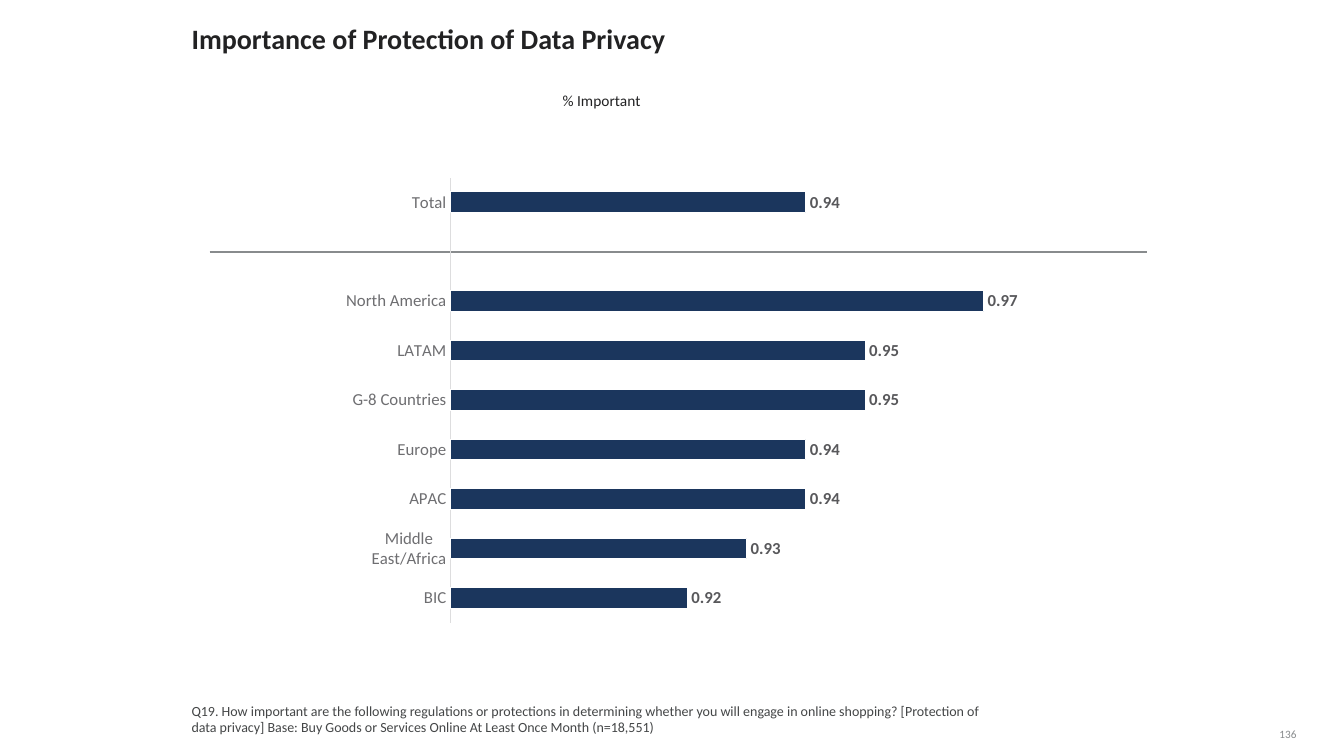
from lxml import etree
from pptx import Presentation
from pptx import util as u
from pptx.chart import data as chart_data
from pptx.dml import color
from pptx.enum import chart as ch, shapes, text
from pptx.oxml import parse_xml
from pptx.oxml.ns import nsdecls, qn

WIDTH, HEIGHT = 13.33, 7.5
LEFT_MARGIN = 1.9
FONT = "Calibri"
COLORS = {"ink": "222223", "note": "444647", "label": "6E6E71", "value": "58585B",
          "rule": "888B8D", "axis": "DDDDDE", "bar": "1B365D", "edge": "FFFFFF"}

# Bars and the empty row that separates the total from the regions
IMPORTANCE = [("Total", 0.94), ("", None), ("North America", 0.97), ("LATAM", 0.95),
              ("G-8 Countries", 0.95), ("Europe", 0.94), ("APAC", 0.94),
              ("Middle East/Africa", 0.93), ("BIC", 0.92)]
# Share of the chart frame taken by the bars: left, top, width, height
PLOT_SHARE = {"x": 0.14, "y": 0.02, "w": 0.84, "h": 0.96}


def rgb(name):
    return color.RGBColor.from_string(COLORS[name])


def style_font(font, size, hue, bold=False):
    font.name, font.size, font.bold = FONT, u.Pt(size), bold
    font.color.rgb = rgb(hue)


def style_line(line, hue, width):
    line.color.rgb = rgb(hue)
    line.width = u.Pt(width)


def fill_text(box, words, size, hue, bold=False, spacing=1.0,
              anchor=text.MSO_ANCHOR.TOP, wrap=True):
    frame = box.text_frame
    frame.margin_left = frame.margin_right = frame.margin_top = frame.margin_bottom = 0
    frame.auto_size = text.MSO_AUTO_SIZE.NONE
    frame.word_wrap = wrap
    frame.vertical_anchor = anchor
    paragraph = frame.paragraphs[0]
    paragraph.alignment = text.PP_ALIGN.LEFT
    paragraph.line_spacing = spacing
    paragraph.space_before = u.Pt(0)
    run = paragraph.add_run()
    run.text = words
    style_font(run.font, size, hue, bold)


def add_text(slide, place, words, size, hue, **options):
    box = slide.shapes.add_textbox(*map(u.Inches, place))
    fill_text(box, words, size, hue, **options)


def set_title(slide, place, words):
    title = slide.shapes.title
    title.left, title.top, title.width, title.height = map(u.Inches, place)
    fill_text(title, words, 20, "ink", bold=True, spacing=0.9)


def add_rule(slide, left, right, top):
    rule = slide.shapes.add_connector(shapes.MSO_CONNECTOR.STRAIGHT,
                                      *map(u.Inches, (left, top, right, top)))
    style_line(rule.line, "rule", 1)
    etree.SubElement(rule.line._get_or_add_ln().getparent(), qn("a:effectLst"))


def fix_plot_area(chart):
    modes = '<c:layoutTarget val="inner"/><c:xMode val="edge"/><c:yMode val="edge"/>'
    sizes = "".join(f'<c:{side} val="{share}"/>' for side, share in PLOT_SHARE.items())
    area = chart._chartSpace.chart.plotArea
    for layout in area.findall(qn("c:layout")):
        area.remove(layout)
    area.insert(0, parse_xml(f'<c:layout {nsdecls("c")}><c:manualLayout>{modes}{sizes}'
                             '</c:manualLayout></c:layout>'))
    # Clear background, so the rule behind the chart shows
    chart._chartSpace.chart.addnext(parse_xml(
        f'<c:spPr {nsdecls("c", "a")}><a:noFill/><a:ln><a:noFill/></a:ln></c:spPr>'))


def add_bars(slide, place):
    bars = chart_data.CategoryChartData(number_format="General")
    bars.categories = [region for region, _ in IMPORTANCE]
    bars.add_series("Series 1", [share for _, share in IMPORTANCE])
    chart = slide.shapes.add_chart(ch.XL_CHART_TYPE.BAR_CLUSTERED,
                                   *map(u.Inches, place), bars).chart
    chart.has_legend = chart.has_title = False
    style_font(chart.font, 10, "ink")
    fix_plot_area(chart)

    # Axes
    regions, shares = chart.category_axis, chart.value_axis
    regions.reverse_order = True
    regions.major_tick_mark = regions.minor_tick_mark = ch.XL_TICK_MARK.NONE
    regions.has_major_gridlines = shares.has_major_gridlines = False
    style_font(regions.tick_labels.font, 12, "label")
    style_line(regions.format.line, "axis", 0.75)
    shares.minimum_scale, shares.maximum_scale = 0.88, 1
    shares.visible = False

    # Bars and their values
    plot = chart.plots[0]
    plot.gap_width = 139
    plot.vary_by_categories = False
    series = plot.series[0]
    series.format.fill.solid()
    series.format.fill.fore_color.rgb = rgb("bar")
    style_line(series.format.line, "edge", 0.75)
    labels = series.data_labels
    labels.show_value = True
    labels.position = ch.XL_LABEL_POSITION.OUTSIDE_END
    style_font(labels.font, 12, "value", bold=True)


def main():
    deck = Presentation()
    deck.slide_width, deck.slide_height = u.Inches(WIDTH), u.Inches(HEIGHT)
    slide = deck.slides.add_slide(deck.slide_layouts[5])

    # Heading
    set_title(slide, (LEFT_MARGIN, 0.25, 11.05, 0.33),
              "Importance of Protection of Data Privacy")
    # Chart with the rule under the total
    add_rule(slide, 2.08, 11.38, HEIGHT / 3)
    add_bars(slide, (3.29, 1.67, 8.4, 4.6))
    add_text(slide, (5.58, 0.9, 2.75, 0.19), "% Important", 11, "ink")
    # Question and page number
    add_text(slide, (LEFT_MARGIN, 6.98, 7.94, 0.32),
             "Q19. How important are the following regulations or protections in "
             "determining whether you will engage in online shopping? [Protection of "
             "data privacy] Base: Buy Goods or Services Online At Least Once Month "
             "(n=18,551)", 10, "note", spacing=0.95, anchor=text.MSO_ANCHOR.BOTTOM)
    add_text(slide, (12.69, 7, 0.45, 0.35), "136", 8, "rule", spacing=0.85,
             anchor=text.MSO_ANCHOR.BOTTOM, wrap=False)

    deck.save("out.pptx")


if __name__ == "__main__":
    main()
